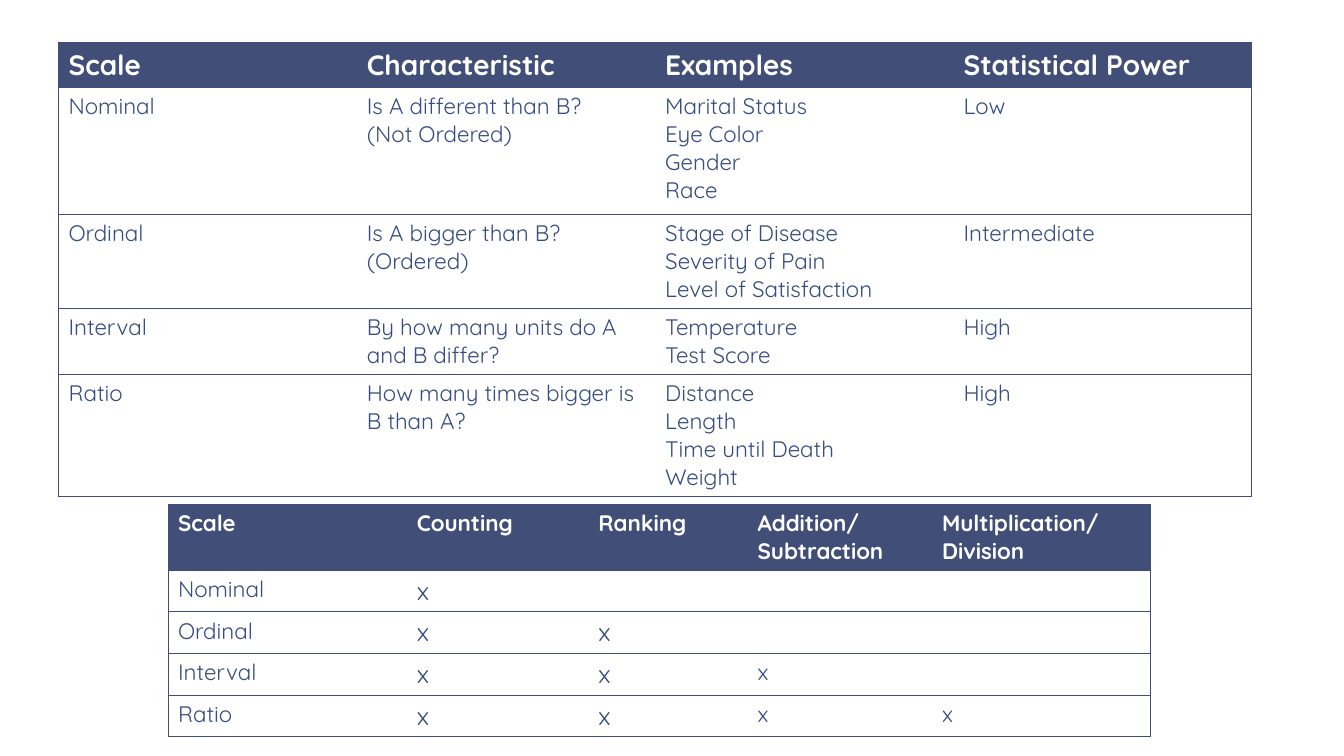
import pptx
import pptx.util
import pptx.dml.color
import pptx.oxml
import pptx.oxml.ns

Pt = pptx.util.Pt
RGB = pptx.dml.color.RGBColor.from_string
hues = {"navy": "414E77", "text": "374C81", "white": "FFFFFF"}

deck = pptx.Presentation()
deck.slide_width, deck.slide_height = Pt(960), Pt(540)
slide = deck.slides.add_slide(deck.slide_layouts[6])


def edge(cell, side, shown):
    fill = f'<a:solidFill><a:srgbClr val="{hues["navy"]}"/></a:solidFill>' if shown else "<a:noFill/>"
    line = f'<a:ln{side} {pptx.oxml.ns.nsdecls("a")} w="{Pt(0.5)}">{fill}</a:ln{side}>'
    cell._tc.get_or_add_tcPr().append(pptx.oxml.parse_xml(line))


# Table contents and sizes
scales = {
    "left": 41.8, "top": 30.2, "head": 20, "mark": 16,
    "cols": [213.1] * 4,
    "rows": [32, 90.7, 67, 46, 87],
    "cells": [
        ["Scale", "Characteristic", "Examples", "Statistical Power"],
        ["Nominal", "Is A different than B?\n(Not Ordered)",
         "Marital Status\nEye Color\nGender\nRace", "Low"],
        ["Ordinal", "Is A bigger than B?\n(Ordered)",
         "Stage of Disease\nSeverity of Pain\nLevel of Satisfaction", "Intermediate"],
        ["Interval", "By how many units do A and B differ?", "Temperature\nTest Score", "High"],
        ["Ratio", "How many times bigger is B than A?",
         "Distance\nLength\nTime until Death\nWeight", "High"],
    ],
}
names = ["Nominal", "Ordinal", "Interval", "Ratio"]
maths = {
    "left": 120, "top": 360, "head": 16, "mark": 18,
    "cols": [170.6, 129.6, 113.8, 131.8, 156.2],
    "rows": [47] + [29.7] * 4,
    "cells": [["Scale", "Counting", "Ranking", "Addition/ Subtraction", "Multiplication/ Division"]]
    + [[name] + ["x"] * n + [""] * (4 - n) for n, name in enumerate(names, 1)],
}

# Draw both tables
for data in (scales, maths):
    wide, high = sum(data["cols"]), sum(data["rows"])
    last = len(data["cols"]) - 1
    table = slide.shapes.add_table(
        len(data["rows"]), last + 1,
        Pt(data["left"]), Pt(data["top"]), Pt(wide), Pt(high)).table
    table.first_row = table.horz_banding = False
    for col, width in zip(table.columns, data["cols"]):
        col.width = Pt(width)
    for row, height in zip(table.rows, data["rows"]):
        row.height = Pt(height)

    for r, line in enumerate(data["cells"]):
        for c, text in enumerate(line):
            cell = table.cell(r, c)
            cell.text = text

            # Outer frame and row rules
            for side, shown in (("L", c == 0), ("R", c == last), ("T", True), ("B", True)):
                edge(cell, side, shown)
            if r == 0:
                cell.fill.solid()
                cell.fill.fore_color.rgb = RGB(hues["navy"])
            else:
                cell.fill.background()

            # Counting and ranking marks are larger
            size = data["head"] if r == 0 else data["mark"] if c in (1, 2) else 16
            style = {"name": "Quicksand", "size": Pt(size), "bold": r == 0}
            for para in cell.text_frame.paragraphs:
                for key, value in style.items():
                    setattr(para.font, key, value)
                para.font.color.rgb = RGB(hues["white" if r == 0 else "text"])

deck.save("out.pptx")
